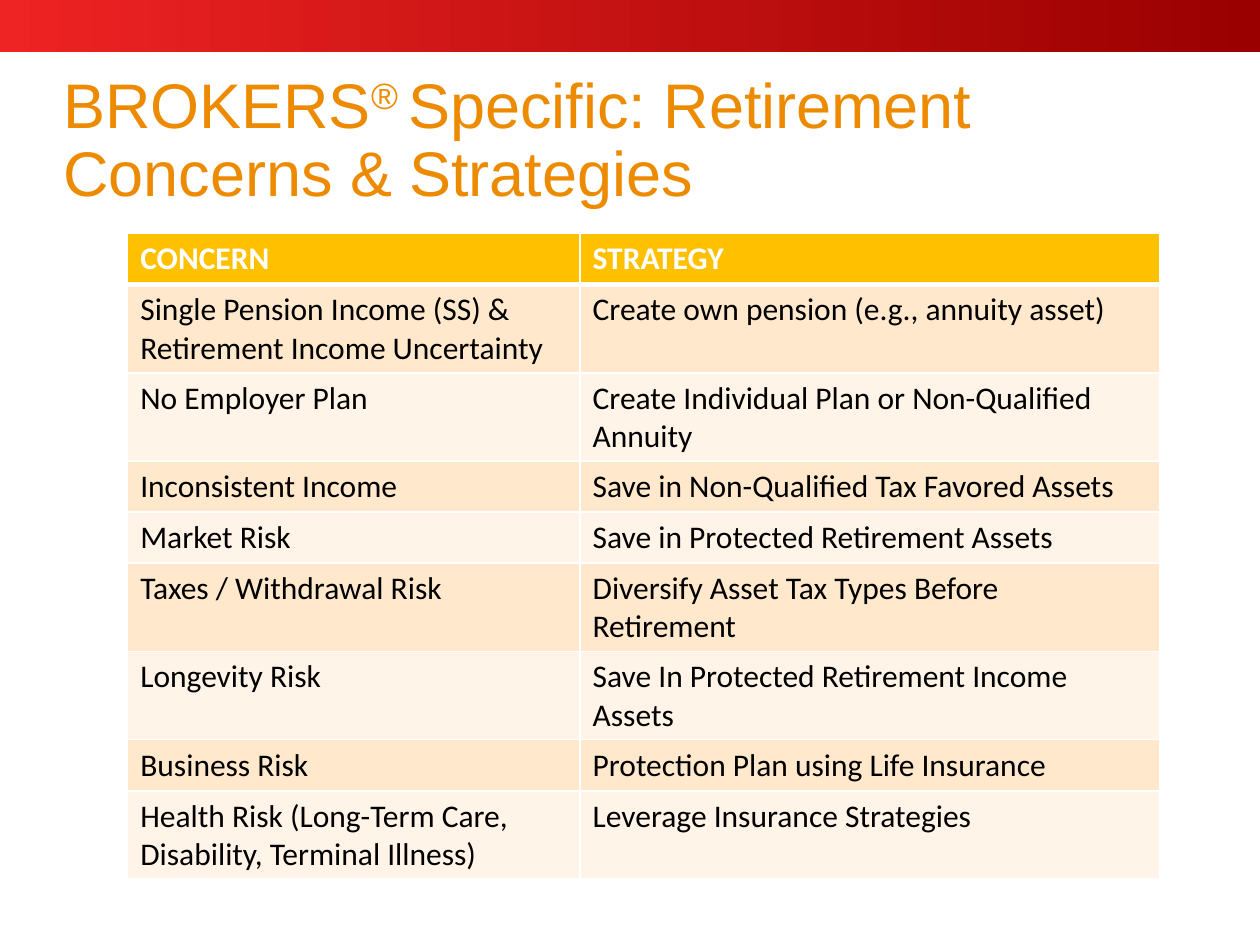
from dataclasses import dataclass

from lxml.etree import SubElement
from pptx import Presentation
from pptx.dml.color import RGBColor
from pptx.enum.shapes import MSO_SHAPE
from pptx.enum.text import MSO_ANCHOR
from pptx.oxml.ns import qn
from pptx.util import Pt


@dataclass(frozen=True)
class Theme:
    white: str = "FFFFFF"
    black: str = "000000"
    orange: str = "ED8B00"
    header: str = "FFC000"
    bands: tuple = ("FFE8CC", "FFF4E7")
    banner: tuple = ("EE2323", "9A0000")
    title_font: str = "Arial"
    table_font: str = "Calibri"
    title_size: int = 36
    table_size: int = 18


THEME = Theme()
ROWS = [
    ("CONCERN", "STRATEGY"),
    ("Single Pension Income (SS) &\nRetirement Income Uncertainty",
     "Create own pension (e.g., annuity asset)"),
    ("No Employer Plan", "Create Individual Plan or Non-Qualified Annuity"),
    ("Inconsistent Income", "Save in Non-Qualified Tax Favored Assets"),
    ("Market Risk", "Save in Protected Retirement Assets"),
    ("Taxes / Withdrawal Risk", "Diversify Asset Tax Types Before Retirement"),
    ("Longevity Risk", "Save In Protected Retirement Income Assets"),
    ("Business Risk", "Protection Plan using Life Insurance"),
    ("Health Risk (Long-Term Care, Disability, Terminal Illness)",
     "Leverage Insurance Strategies"),
]


def style_font(font, name, size, color, bold=False):
    font.name = name
    font.size = Pt(size)
    font.bold = bold
    font.color.rgb = RGBColor.from_string(color)


def add_banner(slide, left, top, width, height):
    banner = slide.shapes.add_shape(
        MSO_SHAPE.RECTANGLE, Pt(left), Pt(top), Pt(width), Pt(height))
    banner.shadow.inherit = False
    banner.line.fill.background()
    banner.fill.gradient()
    banner.fill.gradient_angle = 0
    for stop, position, color in zip(banner.fill.gradient_stops, (0, 1), THEME.banner):
        stop.position = position
        stop.color.rgb = RGBColor.from_string(color)


def add_title(slide, left, top, width, height):
    title = slide.shapes.add_textbox(Pt(left), Pt(top), Pt(width), Pt(height))
    text_frame = title.text_frame
    text_frame.word_wrap = True
    text_frame.vertical_anchor = MSO_ANCHOR.MIDDLE
    text_frame.margin_right = Pt(60)
    paragraph = text_frame.paragraphs[0]
    paragraph.line_spacing = 0.9
    parts = (("BROKERS", 0), ("® ", 30000),
             ("Specific: Retirement Concerns & Strategies", 0))
    for text, baseline in parts:
        run = paragraph.add_run()
        run.text = text
        style_font(run.font, THEME.title_font, THEME.title_size, THEME.orange)
        if baseline:
            run.font._element.set("baseline", str(baseline))


def set_borders(cell, bottom_width):
    properties = cell._tc.get_or_add_tcPr()
    for side, width in (("L", 1), ("R", 1), ("T", 1), ("B", bottom_width)):
        line = SubElement(properties, qn(f"a:ln{side}"), w=str(Pt(width)))
        fill = SubElement(line, qn("a:solidFill"))
        SubElement(fill, qn("a:srgbClr"), val=THEME.white)


def add_concerns_table(slide, left, top, column_widths, row_height):
    frame = slide.shapes.add_table(
        len(ROWS), len(column_widths), Pt(left), Pt(top),
        Pt(sum(column_widths)), Pt(row_height * len(ROWS)))
    table = frame.table
    table.horz_banding = False
    for column, width in zip(table.columns, column_widths):
        column.width = Pt(width)
    for row_index, texts in enumerate(ROWS):
        is_header = row_index == 0
        background = THEME.header if is_header else THEME.bands[(row_index - 1) % 2]
        color = THEME.white if is_header else THEME.black
        table.rows[row_index].height = Pt(row_height)
        for column_index, text in enumerate(texts):
            cell = table.cell(row_index, column_index)
            set_borders(cell, 3 if is_header else 1)
            cell.fill.solid()
            cell.fill.fore_color.rgb = RGBColor.from_string(background)
            cell.text_frame.text = text
            for paragraph in cell.text_frame.paragraphs:
                for run in paragraph.runs:
                    style_font(run.font, THEME.table_font, THEME.table_size,
                               color, is_header)


def main():
    presentation = Presentation()
    presentation.slide_width = Pt(720)
    presentation.slide_height = Pt(540)
    slide = presentation.slides.add_slide(presentation.slide_layouts[6])
    add_banner(slide, 0, 0, 720, 30)
    add_title(slide, 29, 29, 690, 104.4)
    add_concerns_table(slide, 73, 133.4, (258.5, 331), 29.2)
    presentation.save("out.pptx")


if __name__ == "__main__":
    main()
